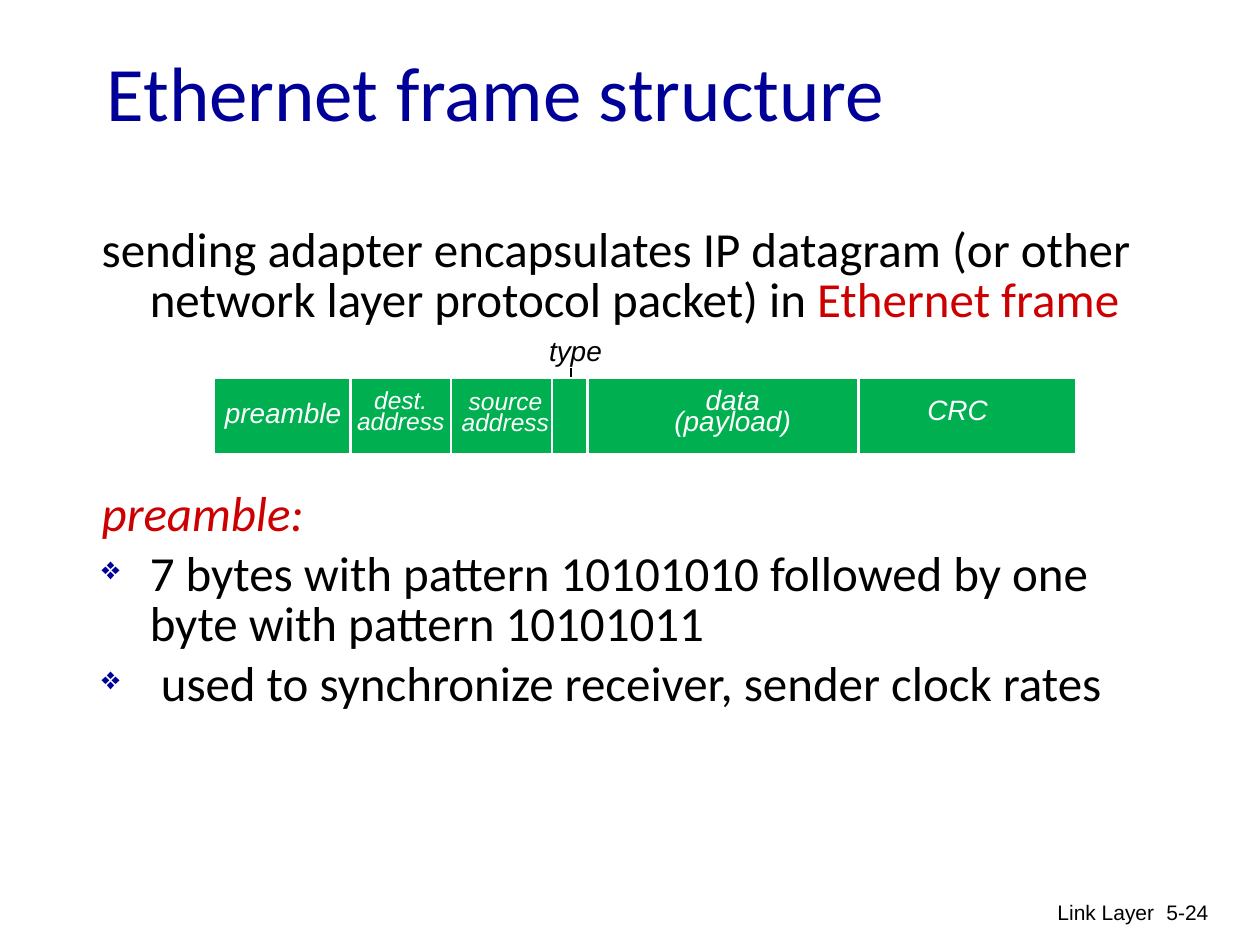
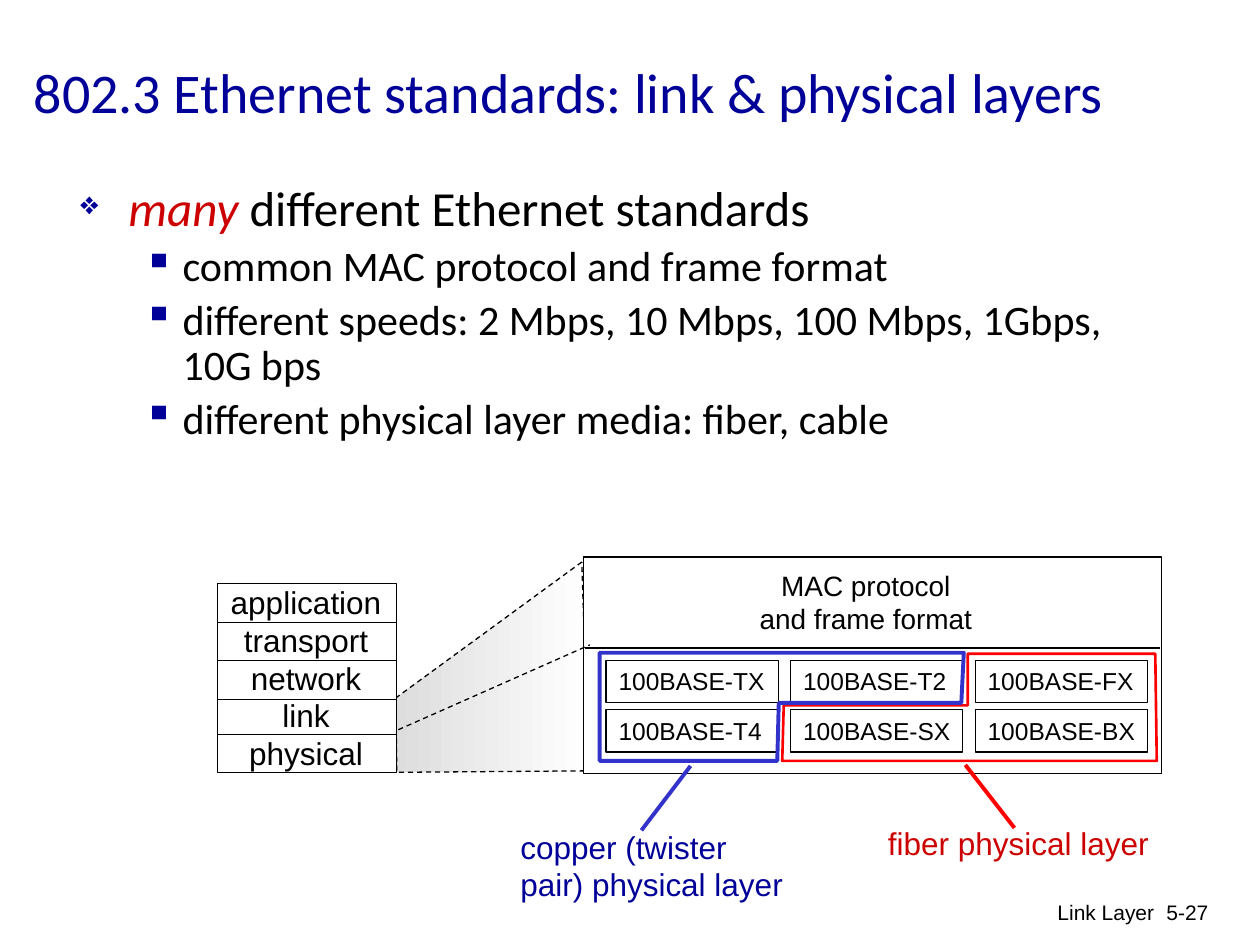
from lxml import etree
from pptx import Presentation
from pptx.dml.color import RGBColor
from pptx.enum.dml import MSO_LINE
from pptx.enum.shapes import MSO_CONNECTOR, MSO_SHAPE
from pptx.enum.text import MSO_ANCHOR, PP_ALIGN
from pptx.oxml.ns import qn
from pptx.util import Cm, Pt

LEFT, CENTER, RIGHT = PP_ALIGN.LEFT, PP_ALIGN.CENTER, PP_ALIGN.RIGHT
TOP, MIDDLE = MSO_ANCHOR.TOP, MSO_ANCHOR.MIDDLE
STRAIGHT, RECTANGLE, DASH = MSO_CONNECTOR.STRAIGHT, MSO_SHAPE.RECTANGLE, MSO_LINE.DASH

BODY_FONT, LABEL_FONT = "Calibri", "Arial"
NAVY, RED, BLACK, WHITE = "000099", "CC0000", "000000", "FFFFFF"
GREEN, BRIGHT_RED, BLUE = "00B050", "FF0000", "3333CC"
THIN = 0.75

# Outline styles: bullet, bullet size %, left margin, hanging indent, size, level
PLAIN = (None, None, 0.97, -0.97, 28, 0)
POINT = ("❖", 65, 0.97, -0.97, 28, 0)
SUBPOINT = ("▪", None, 2.06, -0.79, 24, 1)

# Outline paragraphs: style, space before (None = a fifth of the size), runs (text, colour, italic)
FRAME_OUTLINE = [
    (PLAIN, None, [("sending adapter encapsulates IP datagram (or other network layer "
                    "protocol packet) in ", BLACK, False), ("Ethernet frame", RED, False)]),
    (PLAIN, 93.5, [("preamble:", RED, True)]),
    (POINT, None, [("7 bytes with pattern 10101010 followed by one byte with pattern 10101011",
                    BLACK, False)]),
    (POINT, None, [(" used to synchronize receiver, sender clock rates", BLACK, False)]),
]
STANDARDS_OUTLINE = [
    (POINT, None, [("many ", RED, True), ("different Ethernet standards", BLACK, False)]),
] + [(SUBPOINT, None, [(text, BLACK, False)]) for text in (
    "common MAC protocol and frame format",
    "different speeds: 2 Mbps, 10 Mbps, 100 Mbps, 1Gbps, 10G bps",
    "different physical layer media: fiber, cable")]

FRAME_BOX = (4.32, 7.62, 17.37, 1.52)
FIELD_DIVIDERS = [7.06, 9.09, 11.13, 11.84, 17.3]
FRAME_FIELDS = [  # lines, size, box
    (["dest.", "address"], 14, (6.91, 7.8, 2.34, 1.14)),
    (["source", "address"], 14, (9.02, 7.82, 2.34, 1.14)),
    (["data (payload)"], 16, (12.85, 7.85, 3.84, 1.14)),
    (["CRC"], 16, (18.11, 8.05, 2.39, 0.74)),
    (["preamble"], 16, (4.22, 8.1, 2.97, 0.74)),
]

LAYERS = ["application", "transport", "network", "link", "physical"]
STACK_BOX = (4.39, 11.76, 3.61, 3.81)
LAYER_DIVIDERS = [12.55, 13.31, 14.1, 14.81]
ZOOM_CONE = [(11.73, 11.33), (7.98, 14.07), (8, 15.57), (11.86, 15.54)]
MAC_BOX = (11.76, 11.23, 11.66, 4.37)
STANDARD_ROWS = [
    ["100BASE-TX", "100BASE-T2", "100BASE-FX"],
    ["100BASE-T4", "100BASE-SX", "100BASE-BX"],
]
STANDARD_BOX = (12.22, 13.31, 3.47, 0.86)
STANDARD_PITCH = (3.72, 0.99)
MEDIA = [
    dict(outline=[(19.51, 13.18), (19.51, 14.22), (15.8, 14.22), (15.77, 15.34),
                  (23.32, 15.34), (23.29, 13.18)],
         weight=1.5, pointer=((19.46, 15.42), (20.45, 16.69)), colour=BRIGHT_RED,
         label=["fiber physical layer"], label_colour=RED, box=(17.65, 16.48, 5.82, 1.02)),
    dict(outline=[(19.43, 13.16), (19.38, 14.17), (15.7, 14.17), (15.67, 15.34),
                  (12.09, 15.34), (12.09, 13.16)],
         weight=2.25, pointer=((13.92, 15.44), (12.93, 16.74)), colour=BLUE,
         label=["copper (twister", "pair) physical layer"], label_colour=NAVY,
         box=(10.24, 16.56, 5.87, 1.8)),
]


def rgb(colour):
    return RGBColor.from_string(colour)


def cm(lengths):
    return [Cm(length) for length in lengths]


def add_run(paragraph, text, size, colour, font, italic=False):
    run = paragraph.add_run()
    run.text = text
    run.font.name, run.font.size, run.font.italic = font, Pt(size), italic
    run.font.color.rgb = rgb(colour)


def paragraphs(frame, count):
    """Give the frame's first paragraph, then new ones, up to count."""
    return [frame.paragraphs[0]] + [frame.add_paragraph() for _ in range(count - 1)]


def write(frame, lines, size, colour=BLACK, font=LABEL_FONT, align=LEFT, italic=False,
          wrap=True, anchor=TOP, spacing=None):
    frame.word_wrap, frame.vertical_anchor = wrap, anchor
    for paragraph, line in zip(paragraphs(frame, len(lines)), lines):
        paragraph.alignment = align
        if spacing:
            paragraph.line_spacing = Pt(spacing)
        add_run(paragraph, line, size, colour, font, italic)


def add_label(slide, box, lines, size, **style):
    write(slide.shapes.add_textbox(*cm(box)).text_frame, lines, size, **style)


def set_line(line, colour, weight, dash=None):
    line.color.rgb, line.width = rgb(colour), Pt(weight)
    if dash:
        line.dash_style = dash


def add_line(slide, start, end, colour=BLACK, weight=THIN, dash=None):
    connector = slide.shapes.add_connector(STRAIGHT, *cm(start), *cm(end))
    set_line(connector.line, colour, weight, dash)
    etree.SubElement(connector._element.spPr, qn("a:effectLst"))


def add_box(slide, box, fill=None, line=BLACK):
    shape = slide.shapes.add_shape(RECTANGLE, *cm(box))
    shape.shadow.inherit = False
    if fill:
        shape.fill.solid()
        shape.fill.fore_color.rgb = rgb(fill)
    else:
        shape.fill.background()
    set_line(shape.line, line, THIN)
    return shape


def add_polygon(slide, points, colour, weight, dash=None):
    builder = slide.shapes.build_freeform(*cm(points[0]), scale=1.0)
    builder.add_line_segments([cm(point) for point in points[1:]], close=True)
    shape = builder.convert_to_shape()
    shape.shadow.inherit = False
    shape.fill.background()
    set_line(shape.line, colour, weight, dash)
    return shape


def add_outline(slide, box, items, line_spacing):
    frame = slide.shapes.add_textbox(*cm(box)).text_frame
    frame.word_wrap = True
    for paragraph, (style, space, runs) in zip(paragraphs(frame, len(items)), items):
        bullet, bullet_size, margin, indent, size, level = style
        paragraph.level = level
        paragraph.line_spacing = line_spacing
        paragraph.space_before = Pt(space or size * 0.2)
        props = paragraph._p.get_or_add_pPr()
        props.set("marL", str(Cm(margin)))
        props.set("indent", str(Cm(indent)))
        if bullet:
            bullet_colour = etree.SubElement(props, qn("a:buClr"))
            etree.SubElement(bullet_colour, qn("a:srgbClr"), val=NAVY)
            if bullet_size:
                etree.SubElement(props, qn("a:buSzPct"), val=str(bullet_size * 1000))
            etree.SubElement(props, qn("a:buChar"), char=bullet)
        for text, colour, italic in runs:
            add_run(paragraph, text, size, colour, BODY_FONT, italic)


def add_page(deck, title, title_box, title_size, number):
    """Add a slide with the shared footer and title."""
    slide = deck.slides.add_slide(deck.slide_layouts[6])
    add_label(slide, (15.47, 18.01, 8.05, 1.27), ["Link Layer"], 12, align=RIGHT)
    add_label(slide, (22.73, 18.01, 1.88, 1.27), [number], 12, align=RIGHT)
    add_label(slide, title_box, [title], title_size, colour=NAVY, font=BODY_FONT, anchor=MIDDLE)
    return slide


def build_frame_slide(deck):
    slide = add_page(deck, "Ethernet frame structure", (1.9, 0.97, 21.59, 1.7), 44, "5-24")
    add_outline(slide, (1.8, 4.47, 21.59, 12.07), FRAME_OUTLINE, 0.85)
    add_line(slide, (11.51, 7.42), (11.51, 7.98))
    add_box(slide, FRAME_BOX, GREEN, WHITE)
    top, bottom = FRAME_BOX[1], FRAME_BOX[1] + FRAME_BOX[3]
    for x in FIELD_DIVIDERS:
        add_line(slide, (x, top), (x, bottom), WHITE, 1.5)
    for lines, size, box in FRAME_FIELDS:
        add_label(slide, box, lines, size, colour=WHITE, align=CENTER, italic=True, spacing=12)
    add_label(slide, (10.82, 6.6, 2.13, 0.94), ["type"], 16, italic=True)


def build_standards_slide(deck):
    slide = add_page(deck, "802.3 Ethernet standards: link & physical layers",
                     (0.43, 0.25, 24.21, 3.18), 32, "5-27")
    add_outline(slide, (1.37, 3.58, 21.59, 5.84), STANDARDS_OUTLINE, 0.9)

    cone = add_polygon(slide, ZOOM_CONE, BLACK, THIN, DASH)
    cone.fill.gradient()
    cone.fill.gradient_angle = 0
    for stop, colour in zip(cone.fill.gradient_stops, ("DDDDDD", WHITE)):
        stop.color.rgb = rgb(colour)

    add_box(slide, STACK_BOX, WHITE)
    add_label(slide, (4.39, 11.63, 3.56, 4.06), LAYERS, 18, align=CENTER, wrap=False)
    left, right = STACK_BOX[0], STACK_BOX[0] + STACK_BOX[2]
    for y in LAYER_DIVIDERS:
        add_line(slide, (left, y), (right, y))

    add_box(slide, MAC_BOX, WHITE)
    add_line(slide, (11.79, 13.06), (23.39, 13.06))
    add_label(slide, (15.04, 11.33, 4.83, 1.63), ["MAC protocol", "and frame format"], 16,
              align=CENTER, wrap=False)
    add_line(slide, (8.03, 14.71), (11.89, 13), dash=DASH)

    x, y, width, height = STANDARD_BOX
    for row, names in enumerate(STANDARD_ROWS):
        for column, name in enumerate(names):
            box = (x + column * STANDARD_PITCH[0], y + row * STANDARD_PITCH[1], width, height)
            write(add_box(slide, box).text_frame, [name], 14, wrap=False)

    for medium in MEDIA:
        add_polygon(slide, medium["outline"], medium["colour"], medium["weight"])
        add_line(slide, *medium["pointer"], medium["colour"], 2.25)
        add_label(slide, medium["box"], medium["label"], 18, colour=medium["label_colour"],
                  wrap=False)


def main():
    deck = Presentation()
    deck.slide_width, deck.slide_height = Cm(25.4), Cm(19.05)
    build_frame_slide(deck)
    build_standards_slide(deck)
    deck.save("out.pptx")


if __name__ == "__main__":
    main()
